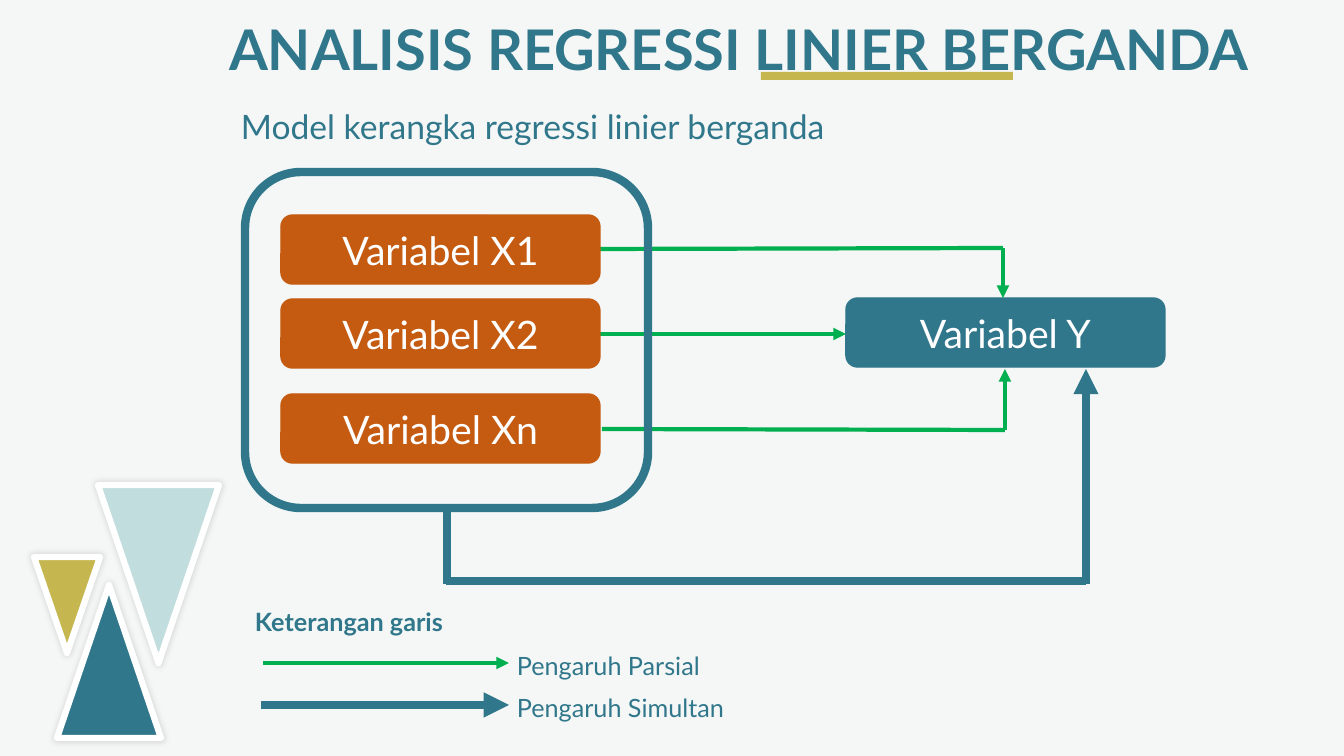
from lxml import etree
from pptx import Presentation
from pptx.dml.color import RGBColor
from pptx.enum.shapes import MSO_CONNECTOR, MSO_SHAPE
from pptx.enum.text import MSO_ANCHOR, MSO_AUTO_SIZE, PP_ALIGN
from pptx.oxml import parse_xml
from pptx.oxml.ns import nsdecls, qn
from pptx.util import Pt

STRAIGHT = MSO_CONNECTOR.STRAIGHT
RECT, ROUNDED, TRIANGLE = MSO_SHAPE.RECTANGLE, MSO_SHAPE.ROUNDED_RECTANGLE, MSO_SHAPE.ISOSCELES_TRIANGLE
TOP, MIDDLE = MSO_ANCHOR.TOP, MSO_ANCHOR.MIDDLE
LEFT, CENTER, JUSTIFY = PP_ALIGN.LEFT, PP_ALIGN.CENTER, PP_ALIGN.JUSTIFY
NO_FIT = MSO_AUTO_SIZE.NONE

EMU_PER_PX = 914400 / 100.8
TEAL, ORANGE, GREEN, OLIVE = "30778B", "C55A11", "00B050", "C5B64F"
PALE_TEAL, WHITE, BACKGROUND = "C1DDDE", "FFFFFF", "F5F7F6"
PARTIAL, SIMULTANEOUS = (GREEN, 3), (TEAL, 6)


def px(*lengths):
    return [round(length * EMU_PER_PX) for length in lengths]


def rgb(hex_code):
    return RGBColor.from_string(hex_code)


class Deck:
    font = "Lato"

    def __init__(self):
        self.presentation = Presentation()
        self.presentation.slide_width, self.presentation.slide_height = px(1344, 756)
        self.slide = self.presentation.slides.add_slide(self.presentation.slide_layouts[5])
        background = self.slide.background.fill
        background.solid()
        background.fore_color.rgb = rgb(BACKGROUND)

    def set_text(self, frame, words, size, color=TEAL, bold=False, align=LEFT, anchor=TOP, wrap=True):
        frame.word_wrap = wrap
        frame.auto_size = NO_FIT
        frame.vertical_anchor = anchor
        paragraph = frame.paragraphs[0]
        paragraph.text = words
        paragraph.alignment = align
        font = paragraph.font
        font.name, font.size, font.bold = self.font, Pt(size), bold
        font.color.rgb = rgb(color)
        return paragraph

    def title(self, box, words):
        title = self.slide.shapes.title
        title.left, title.top, title.width, title.height = px(*box)
        self.set_text(title.text_frame, words, 40, bold=True, align=JUSTIFY)

    def text(self, box, words, size, **style):
        frame = self.slide.shapes.add_textbox(*px(*box)).text_frame
        return self.set_text(frame, words, size, **style)

    def shape(self, kind, box, fill=None, line=None, width=1):
        shape = self.slide.shapes.add_shape(kind, *px(*box))
        shape.shadow.inherit = False
        if fill:
            shape.fill.solid()
            shape.fill.fore_color.rgb = rgb(fill)
        else:
            shape.fill.background()
        if line:
            shape.line.color.rgb = rgb(line)
            shape.line.width = Pt(width)
        else:
            shape.line.fill.background()
        return shape

    def triangle(self, box, fill, rotation=0):
        """Draw a white-edged triangle with a soft glow-like shadow."""
        triangle = self.shape(TRIANGLE, box, fill, WHITE, 4.5)
        triangle.rotation = rotation
        effects = triangle.element.spPr.find(qn("a:effectLst"))
        effects.append(parse_xml(
            f'<a:outerShdw {nsdecls("a")} blurRad="63500" dist="0" dir="0" algn="ctr" rotWithShape="0">'
            '<a:srgbClr val="000000"><a:alpha val="15000"/></a:srgbClr></a:outerShdw>'))

    def variable(self, left, top, words, fill):
        box = self.shape(ROUNDED, (left, top, 319, 69), fill, fill)
        self.set_text(box.text_frame, words, 28, WHITE, align=CENTER, anchor=MIDDLE)

    def line(self, start, end, style, arrow=False):
        color, width = style
        line = self.slide.shapes.add_connector(STRAIGHT, *px(*start, *end))
        line.line.color.rgb = rgb(color)
        line.line.width = Pt(width)
        properties = line.element.spPr
        if arrow:
            etree.SubElement(properties.find(qn("a:ln")), qn("a:tailEnd"), type="triangle")
        etree.SubElement(properties, qn("a:effectLst"))


def main():
    deck = Deck()
    deck.triangle((98, 485, 121, 178), PALE_TEAL, 180)
    deck.triangle((57, 585, 104, 153), TEAL)
    deck.triangle((34, 557, 66, 96), OLIVE, 180)

    deck.title((219, 9, 1052, 78), "ANALISIS REGRESSI LINIER BERGANDA")
    subtitle = deck.text((231, 111, 1086, 133), "Model kerangka regressi linier berganda", 24, align=JUSTIFY)
    subtitle.line_spacing = Pt(21.6)
    deck.shape(RECT, (761, 72, 252, 8), OLIVE)

    deck.variable(846, 298, "Variabel Y", TEAL)
    for start, end, arrow in (
        ((600, 249), (1003, 248), False),
        ((1003, 248), (1003, 298), True),
        ((602, 429), (1005, 430), False),
        ((1005, 430), (1005, 369), True),
        ((600, 334), (846, 334), True),
    ):
        deck.line(start, end, PARTIAL, arrow)
    for top, words in ((215, "Variabel X1"), (299, "Variabel X2"), (394, "Variabel Xn")):
        deck.variable(281, top, words, ORANGE)

    deck.shape(ROUNDED, (245, 172, 403, 336), line=TEAL, width=6)
    for start, end, arrow in (
        ((447, 508), (447, 584), False),
        ((446, 581), (1086, 581), False),
        ((1086, 584), (1086, 369), True),
    ):
        deck.line(start, end, SIMULTANEOUS, arrow)

    deck.text((245, 601, 239, 40), "Keterangan garis", 18, bold=True, wrap=False)
    for left, y, words, style in (
        (263, 663, "Pengaruh Parsial", PARTIAL),
        (261, 705, "Pengaruh Simultan", SIMULTANEOUS),
    ):
        deck.line((left, y), (509, y), style, arrow=True)
        deck.text((507, y - 18, 254, 40), words, 18, wrap=False)

    deck.presentation.save("out.pptx")


if __name__ == "__main__":
    main()
